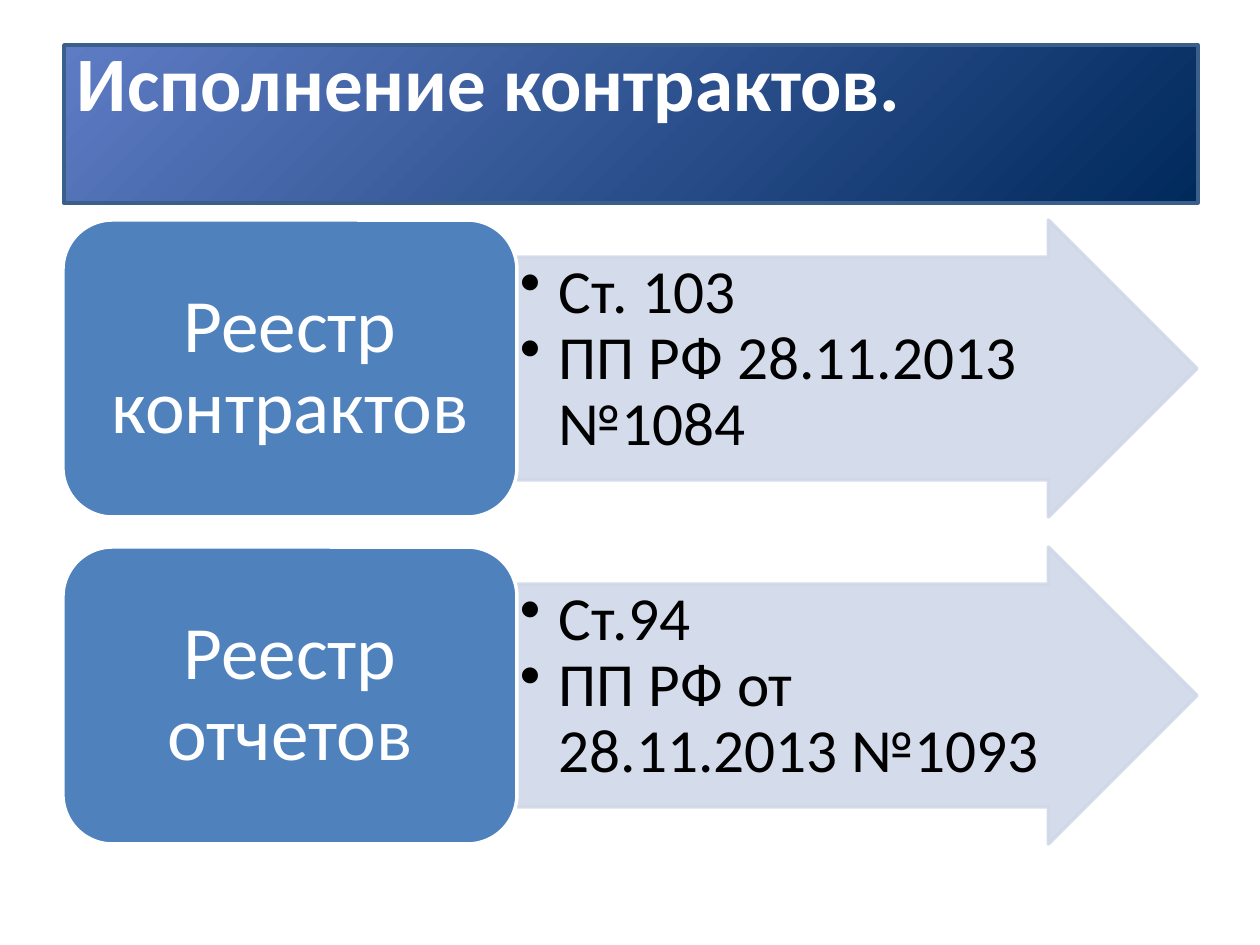
"""Build the contract execution slide: a title bar and two register rows."""
from lxml import etree
from pptx import Presentation, util as u
from pptx.dml.color import RGBColor
from pptx.enum import shapes, text
from pptx.oxml.ns import qn

TITLE = "Исполнение контрактов."
ROWS = [
    ("Реестр контрактов", ["Ст. 103", "ПП РФ 28.11.2013 №1084"]),
    ("Реестр отчетов", ["Ст.94", "ПП РФ от 28.11.2013 №1093"]),
]
COLORS = {
    "white": "FFFFFF", "black": "000000", "block": "4F81BD", "arrow": "D0D8E8",
    "bar_start": "5E7CC4", "bar_end": "00295C", "bar_line": "3A5F8B",
}
FONT = "Calibri"
PX = u.Inches(1) // 126
LEFT, TOP, ROW_STEP, ROW_HEIGHT = 63, 220, 327, 297
BLOCK_WIDTH, ARROW_WIDTH = 454, 680
BULLET_INDENT = 39


def color(name):
    return RGBColor.from_string(COLORS[name])


def add_box(page, kind, place, line, margins, anchor):
    box = page.shapes.add_shape(kind, *(n * PX for n in place))
    box.shadow.inherit = False
    box.line.color.rgb = color(line)
    box.line.width = u.Pt(2)
    frame = box.text_frame
    frame.word_wrap = True
    frame.vertical_anchor = anchor
    frame.margin_left, frame.margin_top = (n * PX for n in margins)
    frame.margin_right, frame.margin_bottom = frame.margin_left, frame.margin_top
    return box


def fill_solid(box, name):
    box.fill.solid()
    box.fill.fore_color.rgb = color(name)


def write(box, lines, size, ink, align, bold=False):
    frame = box.text_frame
    frame.text = "\n".join(lines)
    for para in frame.paragraphs:
        para.alignment = align
        para.line_spacing = 0.9
        para.font.name, para.font.size, para.font.bold = FONT, u.Pt(size), bold
        para.font.color.rgb = color(ink)


def add_bullets(box):
    for para in box.text_frame.paragraphs:
        props = para._p.get_or_add_pPr()
        props.set("marL", str(BULLET_INDENT * PX))
        props.set("indent", str(-BULLET_INDENT * PX))
        bullet = etree.Element(qn("a:buChar"), char="•")
        props.find(qn("a:defRPr")).addprevious(bullet)


def make_translucent(box, percent):
    for tint in box._element.spPr.iter(qn("a:srgbClr")):
        etree.SubElement(tint, qn("a:alpha"), val=str(percent * 1000))


def add_title(page):
    bar = add_box(page, shapes.MSO_SHAPE.RECTANGLE, (64, 45, 1134, 158),
                  "bar_line", (13, 0), text.MSO_ANCHOR.TOP)
    bar.fill.gradient()
    bar.fill.gradient_angle = 315
    for stop, name in zip(bar.fill.gradient_stops, ("bar_start", "bar_end")):
        stop.color.rgb = color(name)
    write(bar, [TITLE], 44, "white", text.PP_ALIGN.LEFT, bold=True)


def add_row(page, top, label, items):
    arrow = add_box(page, shapes.MSO_SHAPE.RIGHT_ARROW,
                    (LEFT + BLOCK_WIDTH, top, ARROW_WIDTH, ROW_HEIGHT),
                    "arrow", (3, 3), text.MSO_ANCHOR.TOP)
    arrow.adjustments[0], arrow.adjustments[1] = 0.75, 0.5
    fill_solid(arrow, "arrow")
    make_translucent(arrow, 90)
    write(arrow, items, 35, "black", text.PP_ALIGN.LEFT)
    add_bullets(arrow)

    block = add_box(page, shapes.MSO_SHAPE.ROUNDED_RECTANGLE,
                    (LEFT, top, BLOCK_WIDTH, ROW_HEIGHT),
                    "white", (23, 11), text.MSO_ANCHOR.MIDDLE)
    fill_solid(block, "block")
    write(block, [label], 43, "white", text.PP_ALIGN.CENTER)


def main():
    deck = Presentation()
    deck.slide_width, deck.slide_height = 1260 * PX, 945 * PX
    page = deck.slides.add_slide(deck.slide_layouts[6])
    add_title(page)
    for index, (label, items) in enumerate(ROWS):
        add_row(page, TOP + index * ROW_STEP, label, items)
    deck.save("out.pptx")


if __name__ == "__main__":
    main()
